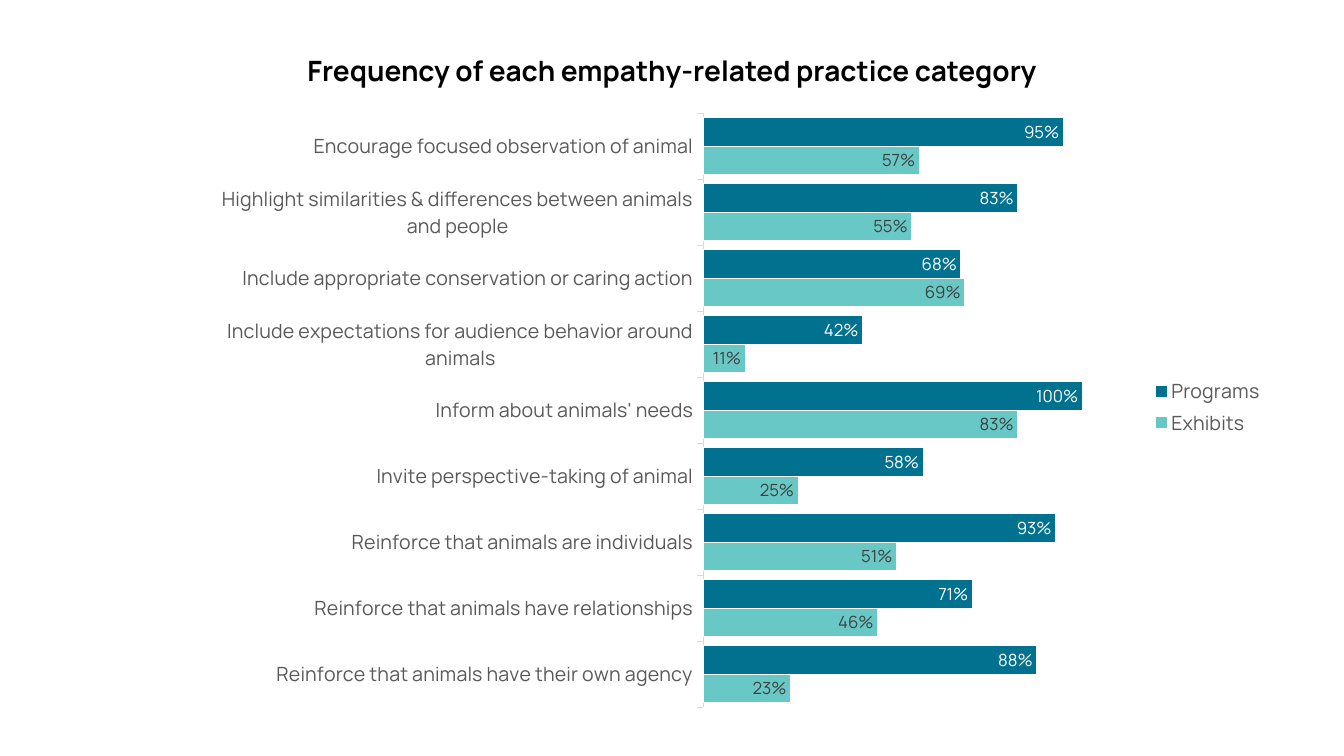
import pptx
import pptx.chart.data
import pptx.dml.color
import pptx.enum.chart
import pptx.enum.text
import pptx.oxml
import pptx.oxml.ns
import pptx.util

Inches = pptx.util.Inches
Pt = pptx.util.Pt
RGBColor = pptx.dml.color.RGBColor

BLACK = RGBColor(0x00, 0x00, 0x00)
WHITE = RGBColor(0xFF, 0xFF, 0xFF)
GREY = RGBColor(0x59, 0x59, 0x59)
DARK = RGBColor(0x40, 0x40, 0x40)
PALE = RGBColor(0xD9, 0xD9, 0xD9)
MINT = RGBColor(0x68, 0xC8, 0xC6)
TEAL = RGBColor(0x00, 0x72, 0x8F)
FONT = "Manrope"

# Practice, exhibits share, programs share; listed from the bottom up
ROWS = [
    ("Reinforce that animals have their own agency", 0.23, 0.88),
    ("Reinforce that animals have relationships", 0.46, 0.71),
    ("Reinforce that animals are individuals", 0.51, 0.93),
    ("Invite perspective-taking of animal", 0.25, 0.58),
    ("Inform about animals' needs", 0.83, 1),
    ("Include expectations for audience behavior around animals", 0.11, 0.42),
    ("Include appropriate conservation or caring action", 0.69, 0.68),
    ("Highlight similarities & differences between animals and people",
     0.55, 0.83),
    ("Encourage focused observation of animal", 0.57, 0.95),
]
# Name, bar colour, label colour
GROUPS = [("Exhibits", MINT, DARK), ("Programs", TEAL, WHITE)]


def style(font, size, color, bold=False):
    font.name = FONT
    font.size = Pt(size)
    font.bold = bold
    font.color.rgb = color


def add_title(slide, text):
    box = slide.shapes.add_textbox(
        Inches(2.61), Inches(0.48), Inches(8.11), Inches(0.44))
    frame = box.text_frame
    frame.word_wrap = False
    frame.auto_size = pptx.enum.text.MSO_AUTO_SIZE.SHAPE_TO_FIT_TEXT
    para = frame.paragraphs[0]
    para.alignment = pptx.enum.text.PP_ALIGN.CENTER
    run = para.add_run()
    run.text = text
    style(run.font, 20, BLACK, bold=True)


def place_plot(chart, left, top, width, height):
    """Fix the inner plot area, in fractions of the chart's size."""
    area = chart._chartSpace.chart.plotArea
    for old in area.findall(pptx.oxml.ns.qn("c:layout")):
        area.remove(old)
    area.insert(0, pptx.oxml.parse_xml(
        f'<c:layout {pptx.oxml.ns.nsdecls("c")}><c:manualLayout>'
        '<c:layoutTarget val="inner"/>'
        '<c:xMode val="edge"/><c:yMode val="edge"/>'
        f'<c:x val="{left}"/><c:y val="{top}"/>'
        f'<c:w val="{width}"/><c:h val="{height}"/>'
        '</c:manualLayout></c:layout>'))


def style_axes(chart):
    axis = chart.category_axis
    axis.has_major_gridlines = False
    axis.major_tick_mark = pptx.enum.chart.XL_TICK_MARK.OUTSIDE
    axis.minor_tick_mark = pptx.enum.chart.XL_TICK_MARK.NONE
    axis.format.line.color.rgb = PALE
    axis.format.line.width = Pt(0.75)
    style(axis.tick_labels.font, 14, GREY)
    chart.value_axis.has_major_gridlines = False
    chart.value_axis.visible = False


def style_bars(series, color, ink):
    series.format.fill.solid()
    series.format.fill.fore_color.rgb = color
    series.format.line.color.rgb = WHITE
    series.format.line.width = Pt(0.75)
    labels = series.data_labels
    labels.show_value = True
    labels.number_format = "0%"
    labels.number_format_is_linked = False
    labels.position = pptx.enum.chart.XL_LABEL_POSITION.INSIDE_END
    style(labels.font, 12, ink)


def add_bars(slide):
    names, *shares = zip(*ROWS)
    data = pptx.chart.data.CategoryChartData(number_format="0%")
    data.categories = names
    for (name, _, _), values in zip(GROUPS, shares):
        data.add_series(name, values)
    chart = slide.shapes.add_chart(
        pptx.enum.chart.XL_CHART_TYPE.BAR_CLUSTERED,
        Inches(2.2), Inches(0.92), Inches(10.44), Inches(6.24), data).chart
    chart.has_title = False
    style(chart.font, 10, BLACK)
    chart.has_legend = True
    chart.legend.position = pptx.enum.chart.XL_LEGEND_POSITION.RIGHT
    chart.legend.include_in_layout = False
    style(chart.legend.font, 14, GREY)
    plot = chart.plots[0]
    plot.gap_width = 32
    plot.vary_by_categories = False
    for series, (_, color, ink) in zip(plot.series, GROUPS):
        style_bars(series, color, ink)
    style_axes(chart)
    place_plot(chart, 0.456, 0.033, 0.433, 0.944)


def main():
    deck = pptx.Presentation()
    deck.slide_width = Inches(13.33)
    deck.slide_height = Inches(7.5)
    slide = deck.slides.add_slide(deck.slide_layouts[6])
    add_bars(slide)
    add_title(slide, "Frequency of each empathy-related practice category")
    deck.save("out.pptx")


if __name__ == "__main__":
    main()
